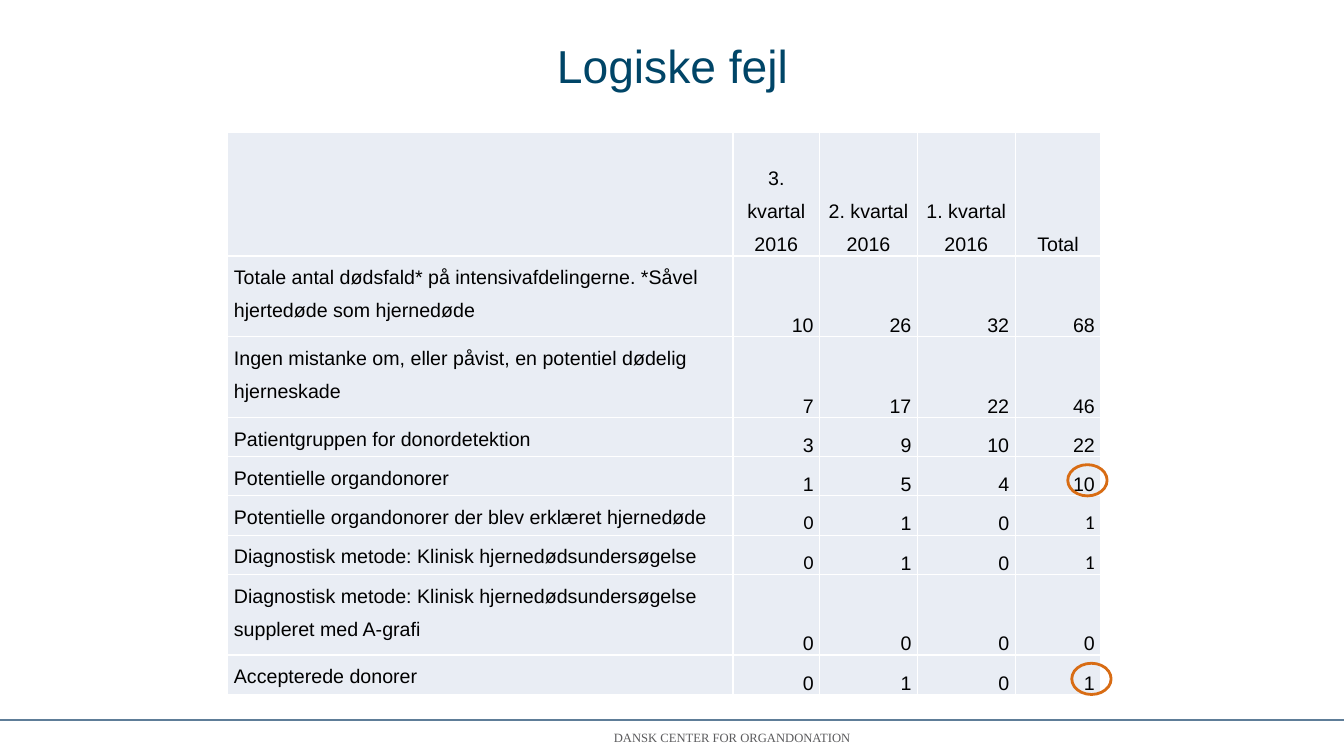
import pptx
import pptx.dml.color
import pptx.enum.shapes
import pptx.enum.text
import pptx.oxml
import pptx.oxml.ns
import pptx.util

TITLE = "Logiske fejl"
FOOTER = "DANSK CENTER FOR ORGANDONATION"
TABLE = [
    ("", "3. kvartal 2016", "2. kvartal 2016", "1. kvartal 2016", "Total"),
    ("Totale antal dødsfald* på intensivafdelingerne. *Såvel hjertedøde som hjernedøde", 10, 26, 32, 68),
    ("Ingen mistanke om, eller påvist, en potentiel dødelig hjerneskade", 7, 17, 22, 46),
    ("Patientgruppen for donordetektion", 3, 9, 10, 22),
    ("Potentielle organdonorer", 1, 5, 4, 10),
    ("Potentielle organdonorer der blev erklæret hjernedøde", 0, 1, 0, 1),
    ("Diagnostisk metode: Klinisk hjernedødsundersøgelse", 0, 1, 0, 1),
    ("Diagnostisk metode: Klinisk hjernedødsundersøgelse suppleret med A-grafi", 0, 0, 0, 0),
    ("Accepterede donorer", 0, 1, 0, 1),
]
CALIBRI_CELLS = {(row, column) for row in (5, 6) for column in (1, 4)}
COLORS = {"title": "004567", "footer": "5B5B5D", "rule": "5E7D98", "cell": "E9EDF4",
          "border": "FFFFFF", "text": "000000", "ring": "D86C14"}

WIDTH, HEIGHT = 13.33, 7.5
TABLE_LEFT, TABLE_TOP = 2.26, 1.31
COLUMNS = [5.01, 0.86, 0.97, 0.97, 0.85]
HEADER, DOUBLE, SINGLE = 1.23, 0.8, 0.39
ROWS = [HEADER, DOUBLE, DOUBLE, SINGLE, SINGLE, SINGLE, SINGLE, DOUBLE, SINGLE]
RULE_TOP = 7.14
RING_WIDTH, RING_HEIGHT = 0.39, 0.31
RINGS = [(4, 10.59), (8, 10.63)]  # table row, left edge

Inches, Pt = pptx.util.Inches, pptx.util.Pt
ALIGN = pptx.enum.text.PP_ALIGN
ANCHOR = pptx.enum.text.MSO_ANCHOR


def color(name):
    return pptx.dml.color.RGBColor.from_string(COLORS[name])


def style_text(para, size, font, color_name, align):
    para.alignment = align
    for span in para.runs:
        span.font.size = Pt(size)
        span.font.name = font
        span.font.color.rgb = color(color_name)


def add_label(page, text, place, size, font, color_name):
    box = page.shapes.add_textbox(*map(Inches, place))
    frame = box.text_frame
    frame.word_wrap = True
    frame.vertical_anchor = ANCHOR.MIDDLE
    frame.text = text
    style_text(frame.paragraphs[0], size, font, color_name, ALIGN.CENTER)


def add_borders(cell):
    """Draw the four cell edges; they must precede the fill in the XML."""
    properties = cell._tc.get_or_add_tcPr()
    for index, edge in enumerate(("lnL", "lnR", "lnT", "lnB")):
        properties.insert(index, pptx.oxml.parse_xml(
            f'<a:{edge} {pptx.oxml.ns.nsdecls("a")} w="{Pt(1)}"><a:solidFill>'
            f'<a:srgbClr val="{COLORS["border"]}"/></a:solidFill></a:{edge}>'))


def fill_cell(cell, value, row, column):
    cell.fill.solid()
    cell.fill.fore_color.rgb = color("cell")
    add_borders(cell)
    cell.margin_left = cell.margin_right = Inches(0.06)
    cell.margin_top = cell.margin_bottom = 0
    cell.vertical_anchor = ANCHOR.TOP if column == 0 else ANCHOR.BOTTOM
    cell.text_frame.text = str(value)
    para = cell.text_frame.paragraphs[0]
    para.line_spacing = 1.5
    para.space_after = Pt(4)
    align = ALIGN.LEFT if column == 0 else ALIGN.CENTER if row == 0 else ALIGN.RIGHT
    font = "Calibri" if (row, column) in CALIBRI_CELLS else "Arial"
    style_text(para, 14, font, "text", align)


def add_donor_table(page):
    table = page.shapes.add_table(
        len(ROWS), len(COLUMNS), Inches(TABLE_LEFT), Inches(TABLE_TOP),
        Inches(sum(COLUMNS)), Inches(sum(ROWS))).table
    table.first_row = table.horz_banding = False
    for column, width in enumerate(COLUMNS):
        table.columns[column].width = Inches(width)
    for row, values in enumerate(TABLE):
        table.rows[row].height = Inches(ROWS[row])
        for column, value in enumerate(values):
            fill_cell(table.cell(row, column), value, row, column)


def add_rule(page):
    rule = page.shapes.add_connector(
        pptx.enum.shapes.MSO_CONNECTOR.STRAIGHT,
        0, Inches(RULE_TOP), Inches(WIDTH), Inches(RULE_TOP))
    rule.line.color.rgb = color("rule")
    rule.line.width = Pt(1.5)
    rule._element.spPr.append(
        pptx.oxml.parse_xml(f'<a:effectLst {pptx.oxml.ns.nsdecls("a")}/>'))


def add_ring(page, row, left):
    """Circle the total of a table row, resting on the row's lower edge."""
    top = TABLE_TOP + sum(ROWS[:row + 1]) - RING_HEIGHT
    ring = page.shapes.add_shape(
        pptx.enum.shapes.MSO_SHAPE.OVAL, Inches(left), Inches(top),
        Inches(RING_WIDTH), Inches(RING_HEIGHT))
    ring.shadow.inherit = False
    ring.fill.background()
    ring.line.color.rgb = color("ring")
    ring.line.width = Pt(2)


def main():
    deck = pptx.Presentation()
    deck.slide_width, deck.slide_height = Inches(WIDTH), Inches(HEIGHT)
    page = deck.slides.add_slide(deck.slide_layouts[6])
    add_label(page, FOOTER, (4.9, 7.19, 4.72, 0.25), 9, "Times New Roman", "footer")
    add_rule(page)
    add_label(page, TITLE, (0.67, 0.3, 12, 0.69), 33, "Arial", "title")
    add_donor_table(page)
    for row, left in RINGS:
        add_ring(page, row, left)
    deck.save("out.pptx")


if __name__ == "__main__":
    main()
